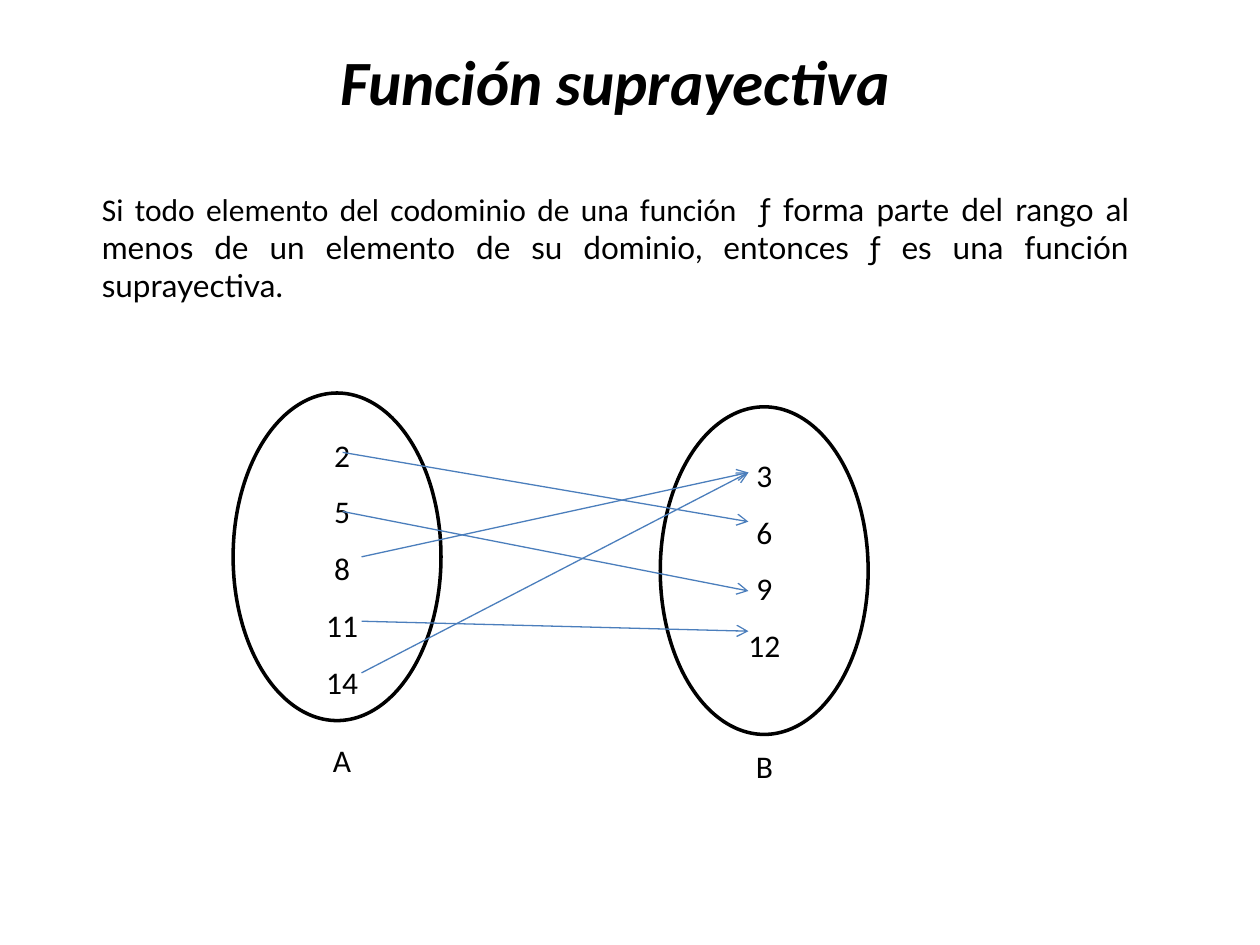
import pptx
import pptx.dml.color
import pptx.enum.shapes
import pptx.enum.text
import pptx.oxml
import pptx.oxml.ns
import pptx.util

Pt = pptx.util.Pt
ALIGN = pptx.enum.text.PP_ALIGN


def color(hex_string):
    """Return the RGB colour for a hex string."""
    return pptx.dml.color.RGBColor.from_string(hex_string)


def write_text(shape, paragraphs, size=18, align=ALIGN.CENTER, spacing=None,
               bold=None, italic=None, anchor=pptx.enum.text.MSO_ANCHOR.TOP):
    """Fill a shape with paragraphs, each a list of (text, font name) runs."""
    frame = shape.text_frame
    frame.word_wrap = True
    frame.auto_size = pptx.enum.text.MSO_AUTO_SIZE.NONE
    frame.vertical_anchor = anchor
    for index, runs in enumerate(paragraphs):
        paragraph = frame.add_paragraph() if index else frame.paragraphs[0]
        paragraph.alignment = align
        paragraph.line_spacing = spacing
        for text, font_name in runs:
            run = paragraph.add_run()
            run.text = text
            run.font.name = font_name
            run.font.size = Pt(size)
            run.font.bold = bold
            run.font.italic = italic
            run.font.color.rgb = color("000000")


def add_text(shapes, left, top, width, height, paragraphs, **text_format):
    """Add a text box holding formatted paragraphs."""
    box = shapes.add_textbox(Pt(left), Pt(top), Pt(width), Pt(height))
    write_text(box, paragraphs, **text_format)


def add_title(slide, left, top, width, height, text):
    """Place and format the slide title."""
    title = slide.shapes.title
    title.left, title.top = Pt(left), Pt(top)
    title.width, title.height = Pt(width), Pt(height)
    write_text(title, [[(text, "Calibri")]], size=36, bold=True, italic=True)


def add_set(shapes, left, top, width, height, elements, name,
            column_left, column_top, column_height, name_top):
    """Draw one oval set with its column of elements and its name below."""
    oval = shapes.add_shape(pptx.enum.shapes.MSO_SHAPE.OVAL,
                            Pt(left), Pt(top), Pt(width), Pt(height))
    oval.shadow.inherit = False
    oval.fill.background()
    oval.line.color.rgb = color("000000")
    oval.line.width = Pt(2)
    add_text(shapes, left + column_left, top + column_top, 56.9, column_height,
             [[(element, "Calibri")] for element in elements], spacing=1.5)
    add_text(shapes, left + column_left, top + name_top, 56.9, 28.8,
             [[(name, "Calibri")]])


def add_arrow(shapes, start_x, start_y, end_x, end_y):
    """Draw one thin arrow from a domain element to its image."""
    arrow = shapes.add_connector(pptx.enum.shapes.MSO_CONNECTOR.STRAIGHT,
                                 Pt(start_x), Pt(start_y), Pt(end_x), Pt(end_y))
    arrow.line.color.rgb = color("4B7EBC")
    arrow.line.width = Pt(0.75)
    head = pptx.oxml.parse_xml(
        f'<a:tailEnd {pptx.oxml.ns.nsdecls("a")} type="arrow"/>')
    arrow.line._get_or_add_ln().append(head)
    arrow._element.spPr.append(
        pptx.oxml.parse_xml(f'<a:effectLst {pptx.oxml.ns.nsdecls("a")}/>'))


def add_mapping(slide, left, top, set_width, set_height):
    """Draw the two sets and the arrows that map A onto B."""
    shapes = slide.shapes.add_group_shape().shapes
    add_set(shapes, left, top, set_width, set_height,
            ["2", "5", "8", "11", "14"], "A", 33.8, 10.1, 167.8, 195.2)
    add_set(shapes, left + 244.1, top + 7.9, set_width, set_height,
            ["3", "6", "9", "12"], "B", 31, 13.7, 138.2, 190.9)
    image_y = {"3": 45.4, "6": 73.5, "9": 113.1, "12": 136.1}
    mapping = [(62.6, 33.9, "6"), (62.6, 67.7, "9"), (73.4, 93.6, "3"),
               (73.4, 130.4, "12"), (73.4, 159.9, "3")]
    for start_x, start_y, image in mapping:
        add_arrow(shapes, left + start_x, top + start_y,
                  left + 294.5, top + image_y[image])


def main():
    """Build and save the slide."""
    presentation = pptx.Presentation()
    presentation.slide_width, presentation.slide_height = Pt(720), Pt(540)
    slide = presentation.slides.add_slide(presentation.slide_layouts[5])
    add_title(slide, 42.5, 20.9, 617.8, 51.1, "Función suprayectiva")
    definition = [
        ("Si todo elemento del codominio de una función  ", "Calibri"),
        ("ƒ forma parte del rango al menos de un elemento de su dominio, "
         "entonces ƒ es una función suprayectiva.", "Lato"),
    ]
    add_text(slide.shapes, 51.1, 105.1, 601.2, 72.7, [definition],
             align=ALIGN.JUSTIFY)
    add_mapping(slide, 133.2, 224.6, 118.8, 187.2)
    presentation.save("out.pptx")


if __name__ == "__main__":
    main()
